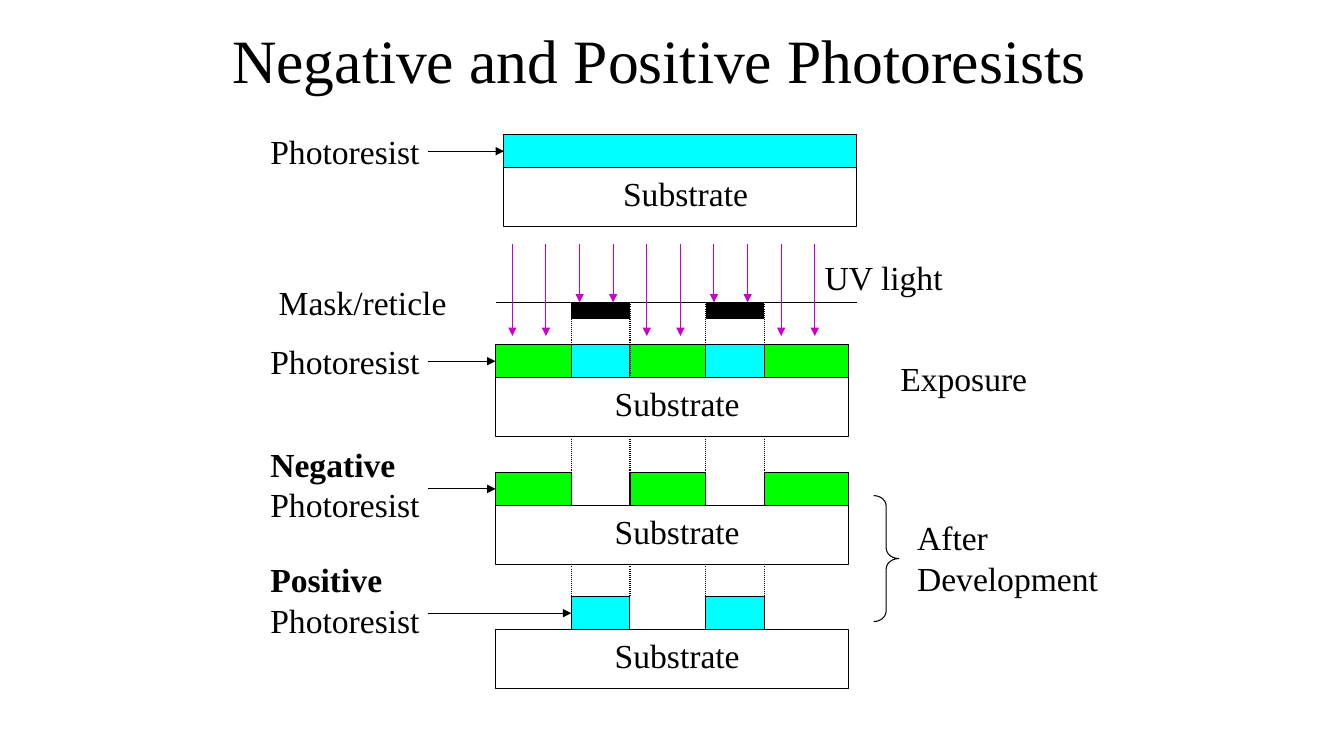
from pptx import Presentation
from pptx.dml.color import RGBColor
from pptx.enum.dml import MSO_LINE
from pptx.enum.shapes import MSO_CONNECTOR, MSO_SHAPE
from pptx.enum.text import MSO_ANCHOR, MSO_AUTO_SIZE, PP_ALIGN
from pptx.oxml.ns import qn
from pptx.util import Inches, Pt
from lxml import etree

STRAIGHT = MSO_CONNECTOR.STRAIGHT
RECTANGLE, BRACE = MSO_SHAPE.RECTANGLE, MSO_SHAPE.RIGHT_BRACE
DOTTED = MSO_LINE.ROUND_DOT
MIDDLE, CENTER, GROW = MSO_ANCHOR.MIDDLE, PP_ALIGN.CENTER, MSO_AUTO_SIZE.SHAPE_TO_FIT_TEXT

BLACK = RGBColor(0x00, 0x00, 0x00)
WHITE = RGBColor(0xFF, 0xFF, 0xFF)
GREEN = RGBColor(0x00, 0xFF, 0x00)
CYAN = RGBColor(0x00, 0xFF, 0xFF)
PURPLE = RGBColor(0xCC, 0x00, 0xCC)
FONT = "Times New Roman"

# All lengths are in grid cells of one twelfth of an inch.
CELLS_PER_INCH = 12
TITLE = "Negative and Positive Photoresists"
TITLE_BOX = (26, 1, 105, 12)
RESIST_HEIGHT, SUBSTRATE_HEIGHT, WAFER_WIDTH = 4, 7, 42
LEFT, RIGHT = 59, 101
MASKED = [(68, 75), (84, 91)]
MASK_TOP, MASK_RIGHT = 36, 102
DOTS_BOTTOM = 71
UV_TOP, UV_BOTTOM, UV_LEFT, UV_STEP, UV_COUNT = 29, 40, 61, 4, 10
POINTER_LEFT = 51
BRACE_BOX = (104, 59, 3, 15)

# left edge, top, resist strips (from, to, colour), end of the pointer
WAFERS = [
    (60, 16, [(60, 102, CYAN)], 60),
    (LEFT, 41, [(LEFT, RIGHT, GREEN)] + [(a, b, CYAN) for a, b in MASKED], LEFT),
    (LEFT, 56.2, [(LEFT, 68, GREEN), (75, 84, GREEN), (91, RIGHT, GREEN)], LEFT),
    (LEFT, 71, [(a, b, CYAN) for a, b in MASKED], 68),
]

# left, top, width, height, runs (text, bold)
LABELS = [
    (31, 15, 24, 6, [("Photoresist", False)]),
    (32, 33, 24, 6, [("Mask/reticle", False)]),
    (31, 40, 24, 6, [("Photoresist", False)]),
    (31, 52.2, 24, 10.9, [("Negative", True), (" Photoresist", False)]),
    (31, 66, 24, 10.9, [("Positive", True), (" Photoresist", False)]),
    (97, 30, 18, 6, [("UV light", False)]),
    (106, 42, 24, 6, [("Exposure", False)]),
    (108, 61, 24, 10.9, [("After Development", False)]),
] + [(left + 13, top + RESIST_HEIGHT, 18, 6, [("Substrate", False)])
     for left, top, strips, pointer_end in WAFERS]


def cells(*values):
    return [Inches(value / CELLS_PER_INCH) for value in values]


def add_run(paragraph, text, size, bold=False):
    run = paragraph.add_run()
    run.text = text
    run.font.name = FONT
    run.font.size = Pt(size)
    run.font.bold = bold
    run.font.color.rgb = BLACK


def add_outlined(slide, kind, box, fill=None):
    shape = slide.shapes.add_shape(kind, *cells(*box))
    shape.shadow.inherit = False
    if fill is None:
        shape.fill.background()
    else:
        shape.fill.solid()
        shape.fill.fore_color.rgb = fill
    shape.line.color.rgb = BLACK
    shape.line.width = Pt(0.75)
    return shape


def add_line(slide, start, end, color=BLACK, width=0.75, dash=None, arrow=False):
    connector = slide.shapes.add_connector(STRAIGHT, *cells(*start, *end))
    connector.line.color.rgb = color
    connector.line.width = Pt(width)
    if dash is not None:
        connector.line.dash_style = dash
    if arrow:
        line = connector.line._get_or_add_ln()
        etree.SubElement(line, qn("a:tailEnd"), type="triangle")
    etree.SubElement(connector._element.spPr, qn("a:effectLst"))


def add_label(slide, left, top, width, height, runs):
    frame = slide.shapes.add_textbox(*cells(left, top, width, height)).text_frame
    frame.word_wrap = True
    frame.auto_size = GROW
    for text, bold in runs:
        add_run(frame.paragraphs[0], text, 24, bold)


def add_title(slide):
    title = slide.shapes.title
    title.left, title.top, title.width, title.height = cells(*TITLE_BOX)
    title.text_frame.vertical_anchor = MIDDLE
    paragraph = title.text_frame.paragraphs[0]
    paragraph.alignment = CENTER
    add_run(paragraph, TITLE, 44)


def add_mask(slide):
    add_line(slide, (LEFT, MASK_TOP), (MASK_RIGHT, MASK_TOP))
    for window in MASKED:
        add_line(slide, (window[0], MASK_TOP + 1), (window[1], MASK_TOP + 1), width=12)
        for edge in window:
            add_line(slide, (edge, DOTS_BOTTOM), (edge, MASK_TOP), dash=DOTTED)


def add_uv_light(slide):
    for index in range(UV_COUNT):
        x = UV_LEFT + index * UV_STEP
        blocked = any(start < x < end for start, end in MASKED)
        bottom = MASK_TOP if blocked else UV_BOTTOM
        add_line(slide, (x, UV_TOP), (x, bottom), PURPLE, arrow=True)


def main():
    presentation = Presentation()
    presentation.slide_width, presentation.slide_height = cells(160, 90)
    slide = presentation.slides.add_slide(presentation.slide_layouts[5])
    add_title(slide)
    for left, top, strips, pointer_end in WAFERS:
        for start, end, color in strips:
            add_outlined(slide, RECTANGLE, (start, top, end - start, RESIST_HEIGHT), color)
    add_mask(slide)
    add_uv_light(slide)
    for left, top, strips, pointer_end in WAFERS:
        substrate = (left, top + RESIST_HEIGHT, WAFER_WIDTH, SUBSTRATE_HEIGHT)
        add_outlined(slide, RECTANGLE, substrate, WHITE)
        middle = top + RESIST_HEIGHT / 2
        add_line(slide, (POINTER_LEFT, middle), (pointer_end, middle), arrow=True)
    for label in LABELS:
        add_label(slide, *label)
    brace = add_outlined(slide, BRACE, BRACE_BOX)
    brace.adjustments[0] = 0.417
    presentation.save("out.pptx")


if __name__ == "__main__":
    main()
